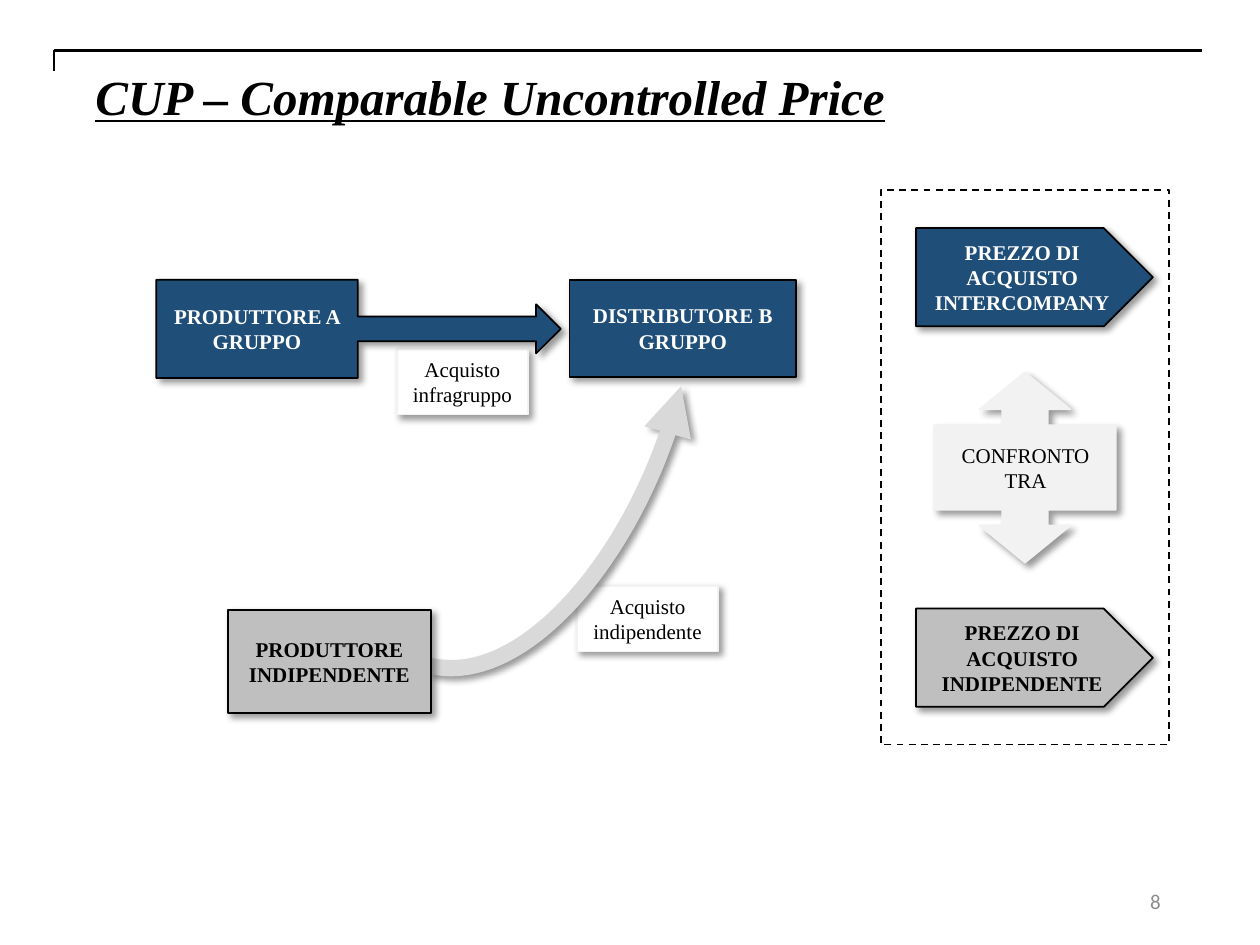
from lxml import etree
from pptx import Presentation
from pptx.dml.color import RGBColor
from pptx.enum.dml import MSO_LINE
from pptx.enum.shapes import MSO_CONNECTOR, MSO_SHAPE
from pptx.enum.text import MSO_ANCHOR, MSO_AUTO_SIZE, PP_ALIGN
from pptx.oxml import parse_xml
from pptx.util import Inches, Pt

RECT = MSO_SHAPE.RECTANGLE
PENTAGON = MSO_SHAPE.PENTAGON
ARROW_CALLOUT = MSO_SHAPE.RIGHT_ARROW_CALLOUT
DOUBLE_CALLOUT = MSO_SHAPE.LEFT_RIGHT_ARROW_CALLOUT
STRAIGHT, CURVE = MSO_CONNECTOR.STRAIGHT, MSO_CONNECTOR.CURVE
DASH = MSO_LINE.DASH
TOP, MIDDLE = MSO_ANCHOR.TOP, MSO_ANCHOR.MIDDLE
LEFT, CENTER, RIGHT = PP_ALIGN.LEFT, PP_ALIGN.CENTER, PP_ALIGN.RIGHT
GROW = MSO_AUTO_SIZE.SHAPE_TO_FIT_TEXT

NAVY, GREY, PALE, CURVE_GREY = "1F4E79", "BFBFBF", "F2F2F2", "D9D9D9"
BLACK, WHITE, NUMBER_GREY = "000000", "FFFFFF", "8C8C8C"
SERIF = "Times New Roman"
DRAWING = "http://schemas.openxmlformats.org/drawingml/2006/main"
SHADOW = (
    f'<a:effectLst xmlns:a="{DRAWING}">'
    '<a:outerShdw blurRad="50800" dist="38100" dir="2700000" algn="tl" rotWithShape="0">'
    '<a:srgbClr val="000000"><a:alpha val="40000"/></a:srgbClr>'
    "</a:outerShdw></a:effectLst>"
)


def rgb(code):
    return RGBColor.from_string(code)


def write(owner, words, align, anchor, color, size=12, face=SERIF, **style):
    frame = owner.text_frame
    frame.word_wrap = True
    frame.vertical_anchor = anchor
    paragraph = frame.paragraphs[0]
    paragraph.alignment = align
    run = paragraph.add_run()
    run.text = words
    run.font.color.rgb = rgb(color)
    for key, value in {"size": Pt(size), "name": face, **style}.items():
        setattr(run.font, key, value)


deck = Presentation()
deck.slide_width, deck.slide_height = Inches(10), Inches(7.5)
slide = deck.slides.add_slide(deck.slide_layouts[6])
shapes = slide.shapes

comparison = shapes.add_shape(RECT, Inches(6.99), Inches(1.51), Inches(2.29), Inches(4.4))
comparison.shadow.inherit = False
comparison.fill.solid()
comparison.fill.fore_color.rgb = rgb(WHITE)
comparison.line.color.rgb = rgb(BLACK)
comparison.line.width = Pt(1)
comparison.line.dash_style = DASH

boxes = [
    (RECT, 4.52, 2.22, 1.8, 0.77, NAVY, BLACK, WHITE, True, "DISTRIBUTORE B GRUPPO", 0, []),
    (DOUBLE_CALLOUT, 7.38, 2.99, 1.51, 1.44, PALE, PALE, BLACK, False, "", 90,
     [0.25, 0.25, 0.204, 0.445]),
    (PENTAGON, 7.27, 1.81, 1.88, 0.78, NAVY, BLACK, WHITE, True,
     "PREZZO DI ACQUISTO INTERCOMPANY", 0, []),
    (PENTAGON, 7.27, 4.83, 1.88, 0.78, GREY, BLACK, BLACK, True,
     "PREZZO DI ACQUISTO INDIPENDENTE", 0, []),
    (RECT, 3.15, 2.77, 1.04, 0.52, WHITE, PALE, BLACK, False, "Acquisto infragruppo", 0, []),
    (RECT, 4.58, 4.65, 1.12, 0.52, WHITE, PALE, BLACK, False, "Acquisto indipendente", 0, []),
    (ARROW_CALLOUT, 1.24, 2.22, 3.21, 0.78, NAVY, BLACK, WHITE, True, "PRODUTTORE A GRUPPO", 0,
     [0.25, 0.25, 0.25, 0.498]),
    (RECT, 1.81, 4.84, 1.61, 0.82, GREY, BLACK, BLACK, True, "PRODUTTORE INDIPENDENTE", 0, []),
]
for kind, x, y, w, h, fill, outline, ink, bold, words, turn, ratios in boxes:
    if words == "PRODUTTORE INDIPENDENTE":
        purchase = shapes.add_connector(CURVE, Inches(5.13), Inches(2.87), Inches(3.69), Inches(5.48))
        purchase.line.color.rgb = rgb(CURVE_GREY)
        purchase.line.width = Pt(9.25)
        properties = purchase._element.spPr
        properties.xfrm.set("rot", str(193 * 60000))
        properties.find(f"{{{DRAWING}}}prstGeom").set("prst", "curvedConnector2")
        etree.SubElement(properties.find(f"{{{DRAWING}}}ln"), f"{{{DRAWING}}}tailEnd", type="triangle")
        properties.append(parse_xml(SHADOW))
    box = shapes.add_shape(kind, Inches(x), Inches(y), Inches(w), Inches(h))
    box.rotation = turn
    for index, ratio in enumerate(ratios):
        box.adjustments[index] = ratio
    box.fill.solid()
    box.fill.fore_color.rgb = rgb(fill)
    box.line.color.rgb = rgb(outline)
    box.line.width = Pt(1)
    box._element.spPr.append(parse_xml(SHADOW))
    if words:
        write(box, words, CENTER, MIDDLE, ink, bold=bold)

versus = shapes.add_textbox(Inches(7.42), Inches(3.46), Inches(1.44), Inches(0.5))
write(versus, "CONFRONTO TRA", CENTER, TOP, BLACK)
versus.text_frame.auto_size = GROW

title = shapes.add_textbox(Inches(0.66), Inches(0.48), Inches(7.43), Inches(0.57))
write(title, "CUP – Comparable Uncontrolled Price", LEFT, TOP, BLACK, 28,
      bold=True, italic=True, underline=True)
title.text_frame.auto_size = GROW

header = shapes.add_group_shape()
for end_x, end_y in [(9.54, 0.4), (0.43, 0.56)]:
    rule = header.shapes.add_connector(STRAIGHT, Inches(0.43), Inches(0.4), Inches(end_x), Inches(end_y))
    rule.line.color.rgb = rgb(BLACK)
    rule.line.width = Pt(1.5)
    etree.SubElement(rule._element.spPr, f"{{{DRAWING}}}effectLst")

page_number = shapes.add_textbox(Inches(7.06), Inches(6.95), Inches(2.25), Inches(0.4))
write(page_number, "8", RIGHT, MIDDLE, NUMBER_GREY, face="Calibri")

deck.save("out.pptx")
